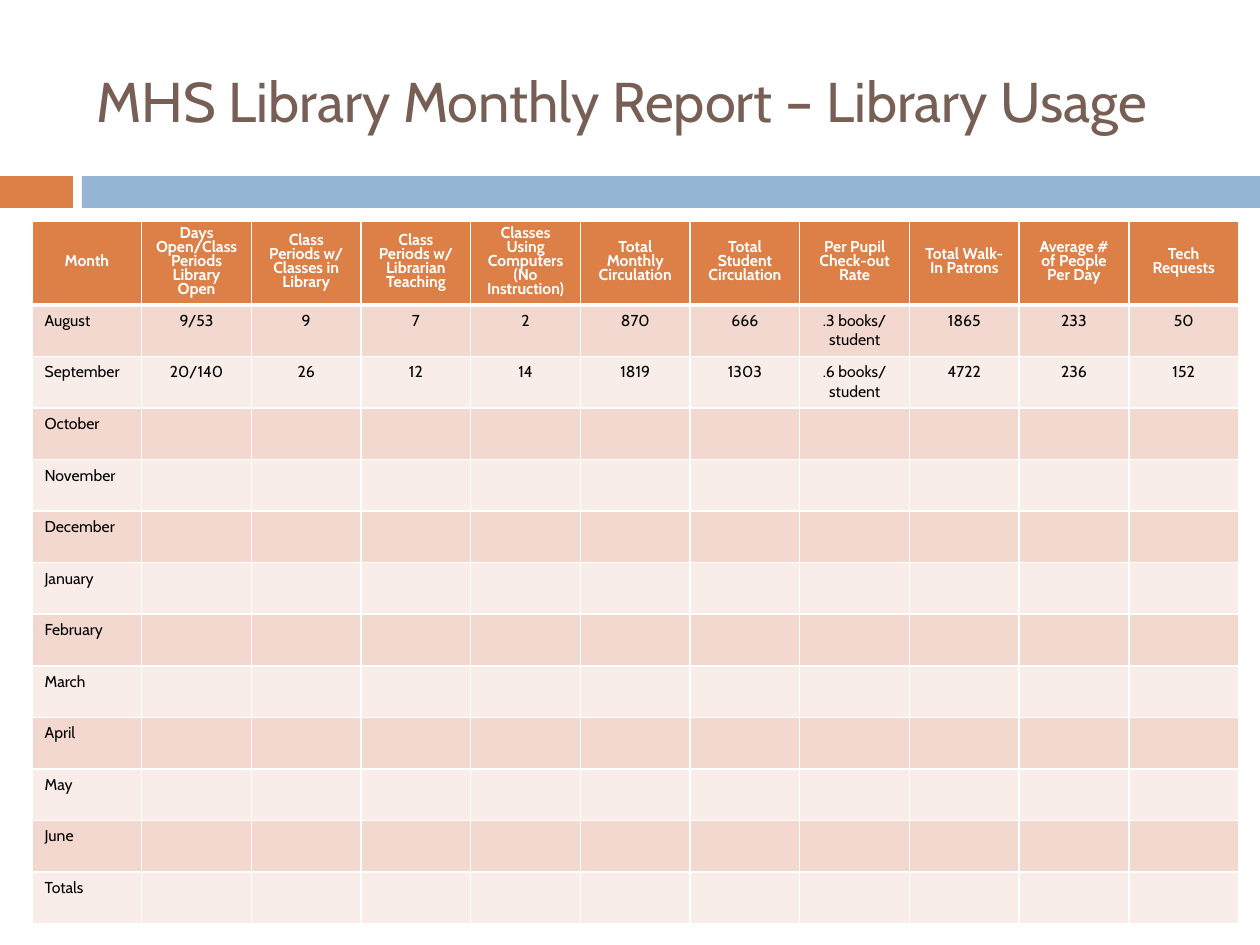
from dataclasses import dataclass

from lxml import etree
from pptx import Presentation
from pptx.dml.color import RGBColor
from pptx.enum.shapes import MSO_SHAPE
from pptx.enum.text import MSO_ANCHOR, PP_ALIGN
from pptx.oxml.ns import qn
from pptx.util import Pt

RECT = MSO_SHAPE.RECTANGLE
LEFT, CENTER = PP_ALIGN.LEFT, PP_ALIGN.CENTER
TOP, MIDDLE = MSO_ANCHOR.TOP, MSO_ANCHOR.MIDDLE
SCALE = 914400 / 126  # EMU in one px


def emu(px):
    return round(px * SCALE)


@dataclass(frozen=True)
class Theme:
    font: str = "Cabin"
    title: str = "775F55"
    accent: str = "DD8047"
    bar: str = "94B6D2"
    bands: tuple = ("F2D8CF", "F9EDE9")
    white: str = "FFFFFF"
    ink: str = "000000"
    big: int = 32
    small: int = 9
    lead: int = 8
    thin: int = 1
    thick: int = 3


class Painter:
    def __init__(self, slide, theme):
        self.slide, self.theme = slide, theme

    def fill(self, item, color):
        item.fill.solid()
        item.fill.fore_color.rgb = RGBColor.from_string(color)

    def label(self, para, text, size, color, bold=False, **style):
        for name, value in style.items():
            setattr(para, name, value)
        if not text:
            # An empty cell keeps the small type size
            para._p.get_or_add_endParaRPr().set("sz", str(size * 100))
            return
        run = para.add_run()
        run.text = text
        form = {"name": self.theme.font, "size": Pt(size), "bold": bold}
        for name, value in form.items():
            setattr(run.font, name, value)
        run.font.color.rgb = RGBColor.from_string(color)

    def rect(self, x, y, w, h, color):
        shape = self.slide.shapes.add_shape(RECT, *map(emu, (x, y, w, h)))
        shape.shadow.inherit = False
        shape.line.fill.background()
        self.fill(shape, color)

    def title(self, x, y, w, h, text):
        box = self.slide.shapes.add_textbox(*map(emu, (x, y, w, h)))
        frame = box.text_frame
        for name, value in {"word_wrap": True, "vertical_anchor": MIDDLE}.items():
            setattr(frame, name, value)
        self.label(frame.paragraphs[0], text, self.theme.big, self.theme.title)

    def border(self, cell, widths):
        props = cell._tc.get_or_add_tcPr()
        for side, width in widths.items():
            line = etree.SubElement(props, qn("a:ln" + side), w=str(Pt(width)))
            solid = etree.SubElement(line, qn("a:solidFill"))
            etree.SubElement(solid, qn("a:srgbClr"), val=self.theme.white)

    def cell(self, cell, text, row, col):
        look = self.theme
        head = row == 0
        # The rule under the header is heavier
        widths = dict.fromkeys("LRTB", look.thin)
        if row < 2:
            widths["B" if head else "T"] = look.thick
        self.border(cell, widths)
        self.fill(cell, look.accent if head else look.bands[(row - 1) % 2])
        cell.vertical_anchor = MIDDLE if head else TOP
        style = {"alignment": CENTER if head or col else LEFT}
        if head:
            style["line_spacing"] = Pt(look.lead)
        self.label(cell.text_frame.paragraphs[0], text, look.small,
                   look.white if head else look.ink, head, **style)

    def table(self, x, y, w, h, top, data):
        rows, cols = len(data), len(data[0])
        frame = self.slide.shapes.add_table(rows, cols, *map(emu, (x, y, w, h)))
        grid = frame.table
        for col in grid.columns:
            col.width = emu(w / cols)
        for i, row in enumerate(grid.rows):
            row.height = emu((h - top) / (rows - 1) if i else top)
        for i, line in enumerate(data):
            for j, text in enumerate(line):
                self.cell(grid.cell(i, j), text, i, j)


HEADS = [
    "Month", "Days Open/Class Periods Library Open",
    "Class Periods w/ Classes in Library", "Class Periods w/ Librarian Teaching",
    "Classes Using Computers (No Instruction)", "Total Monthly Circulation",
    "Total Student Circulation", "Per Pupil Check-out Rate",
    "Total Walk-In Patrons", "Average # of People Per Day", "Tech Requests",
]
USAGE = [
    ["August", "9/53", "9", "7", "2", "870", "666", ".3 books/ student",
     "1865", "233", "50"],
    ["September", "20/140", "26", "12", "14", "1819", "1303",
     ".6 books/ student", "4722", "236", "152"],
]
OPEN = ["October", "November", "December", "January", "February", "March",
        "April", "May", "June", "Totals"]


def main():
    deck = Presentation()
    deck.slide_width, deck.slide_height = emu(1260), emu(945)
    theme = Theme()
    page = Painter(deck.slides.add_slide(deck.slide_layouts[6]), theme)

    # Divider bars
    page.rect(0, 176, 73, 32, theme.accent)
    page.rect(82, 176, 1178, 32, theme.bar)

    # Title
    page.title(84, 32, 1124, 136, "MHS Library Monthly Report – Library Usage")

    # Monthly usage table
    blank = [""] * (len(HEADS) - 1)
    data = [HEADS, *USAGE, *([month, *blank] for month in OPEN)]
    page.table(32, 221, 1207, 703, 84, data)

    deck.save("out.pptx")


if __name__ == "__main__":
    main()
